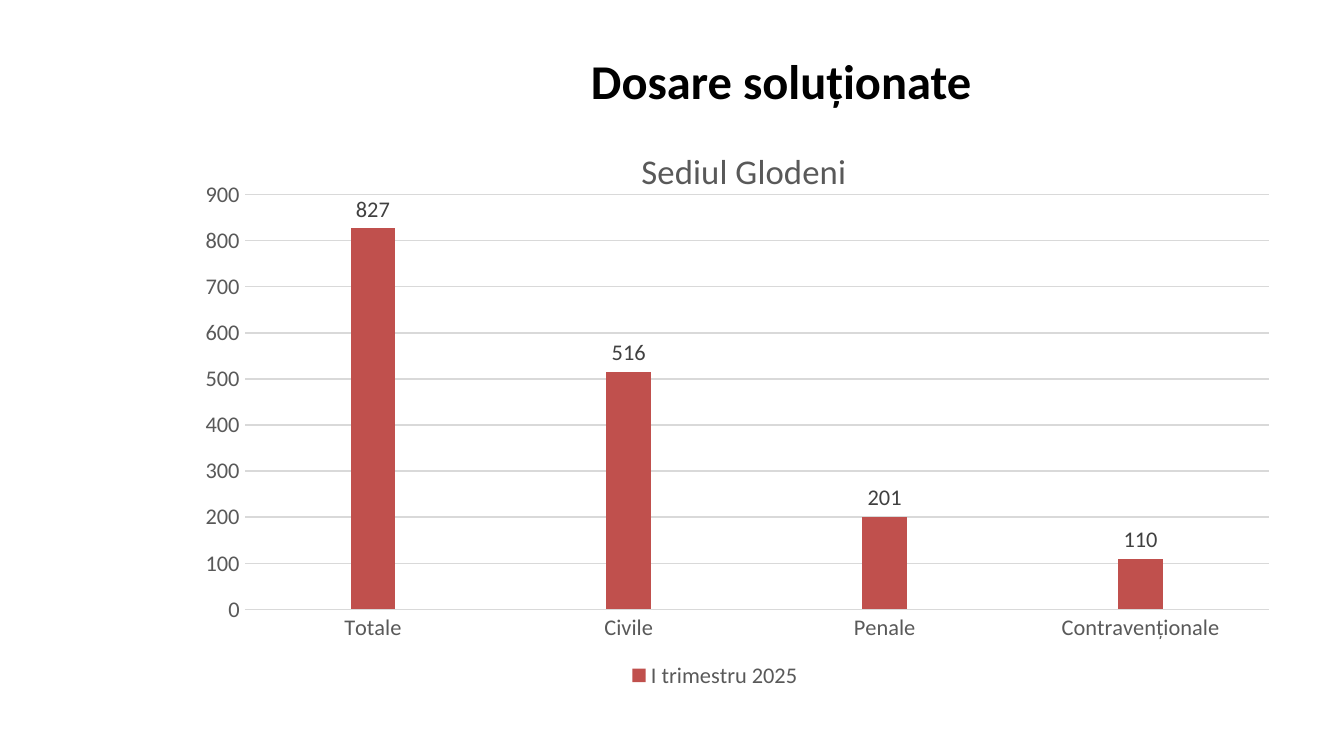
from pptx import Presentation
from pptx import util as u
from pptx.chart import data
from pptx.dml.color import RGBColor
from pptx.enum import chart as charts, text
from pptx.oxml import parse_xml
from pptx.oxml.ns import nsdecls

FONT = "Calibri"
BLACK = RGBColor(0x00, 0x00, 0x00)
BLUE = RGBColor(0x4F, 0x81, 0xBD)
RED = RGBColor(0xC0, 0x50, 0x4D)
GREEN = RGBColor(0x9B, 0xBB, 0x59)
GREY = RGBColor(0x59, 0x59, 0x59)
DARK_GREY = RGBColor(0x40, 0x40, 0x40)
GRID_GREY = RGBColor(0xD9, 0xD9, 0xD9)

CATEGORIES = ["Totale", "Civile", "Penale", "Contravenționale"]
EMPTY = [None] * len(CATEGORIES)
SERIES = [
    ("Series 1", EMPTY, BLUE),
    ("I trimestru 2025", [827, 516, 201, 110], RED),
    ("Series 3", EMPTY, GREEN),
]
CHART_WIDTH, CHART_HEIGHT = 595.4, 319.7


def set_font(font, size, color, bold=False):
    font.name = FONT
    font.size = u.Pt(size)
    font.bold = bold
    font.color.rgb = color


def write_text(frame, content, size, color, bold=False):
    paragraph = frame.paragraphs[0]
    paragraph.alignment = text.PP_ALIGN.CENTER
    run = paragraph.add_run()
    run.text = content
    set_font(run.font, size, color, bold)


def add_heading(slide, content, left, top, width, height):
    box = slide.shapes.add_textbox(u.Pt(left), u.Pt(top), u.Pt(width), u.Pt(height))
    frame = box.text_frame
    frame.word_wrap = True
    frame.vertical_anchor = text.MSO_ANCHOR.TOP
    frame.margin_top = u.Pt(4.5)
    write_text(frame, content, size=26, color=BLACK, bold=True)


def place(chart, tag, index, inner=False, **lengths):
    parent = chart.element.xpath(f".//c:{tag}")[0]
    for layout in parent.xpath("./c:layout"):
        parent.remove(layout)
    target = '<c:layoutTarget val="inner"/>' if inner else ""
    modes = "".join(f'<c:{key}Mode val="edge"/>' for key in "xy")
    values = "".join(
        f'<c:{key} val="{length / (CHART_WIDTH if key in "xw" else CHART_HEIGHT):.4f}"/>'
        for key, length in lengths.items())
    parent.insert(index, parse_xml(
        f'<c:layout {nsdecls("c")}><c:manualLayout>{target}{modes}{values}'
        "</c:manualLayout></c:layout>"))


def hide_empty_legend_entries(chart):
    legend = chart.element.xpath(".//c:legend")[0]
    empty = [index for index, (_, values, _) in enumerate(SERIES) if values is EMPTY]
    for position, index in enumerate(empty, start=1):
        legend.insert(position, parse_xml(
            f'<c:legendEntry {nsdecls("c")}><c:idx val="{index}"/>'
            '<c:delete val="1"/></c:legendEntry>'))


def style_line(line):
    line.color.rgb = GRID_GREY
    line.width = u.Pt(0.75)


def style_axes(chart):
    for axis in (chart.category_axis, chart.value_axis):
        axis.major_tick_mark = charts.XL_TICK_MARK.NONE
        axis.minor_tick_mark = charts.XL_TICK_MARK.NONE
        set_font(axis.tick_labels.font, 12, GREY)
    style_line(chart.category_axis.format.line)
    values = chart.value_axis
    values.minimum_scale, values.maximum_scale, values.major_unit = 0, 900, 100
    values.format.line.fill.background()
    style_line(values.major_gridlines.format.line)


def style_columns(plot):
    plot.vary_by_categories = False
    plot.gap_width = 219
    plot.overlap = -27
    for series, (_, _, color) in zip(plot.series, SERIES):
        series.format.fill.solid()
        series.format.fill.fore_color.rgb = color
        labels = series.data_labels
        labels.show_value = True
        labels.position = charts.XL_LABEL_POSITION.OUTSIDE_END
        set_font(labels.font, 12, DARK_GREY)


def add_column_chart(slide, title, left, top):
    chart_data = data.CategoryChartData()
    chart_data.categories = CATEGORIES
    for name, values, _ in SERIES:
        chart_data.add_series(name, values)
    chart = slide.shapes.add_chart(
        charts.XL_CHART_TYPE.COLUMN_CLUSTERED, u.Pt(left), u.Pt(top),
        u.Pt(CHART_WIDTH), u.Pt(CHART_HEIGHT), chart_data).chart
    set_font(chart.font, 10, BLACK)
    chart.has_title = True
    write_text(chart.chart_title.text_frame, title, size=18.6, color=GREY)
    chart.has_legend = True
    chart.legend.position = charts.XL_LEGEND_POSITION.BOTTOM
    chart.legend.include_in_layout = False
    set_font(chart.legend.font, 12, GREY)
    style_axes(chart)
    style_columns(chart.plots[0])
    place(chart, "title", 1, x=246, y=6)
    place(chart, "legend", 1, x=240.5, y=282.4)
    place(chart, "plotArea", 0, inner=True, x=36.9, y=34.8, w=548.4, h=222.2)
    hide_empty_legend_entries(chart)


def main():
    presentation = Presentation()
    presentation.slide_width = u.Pt(720)
    presentation.slide_height = u.Pt(405)
    slide = presentation.slides.add_slide(presentation.slide_layouts[6])
    add_heading(slide, "Dosare soluționate", left=147.6, top=23, width=542.2, height=70.6)
    add_column_chart(slide, "Sediul Glodeni", left=94.3, top=69.5)
    presentation.save("out.pptx")


if __name__ == "__main__":
    main()
